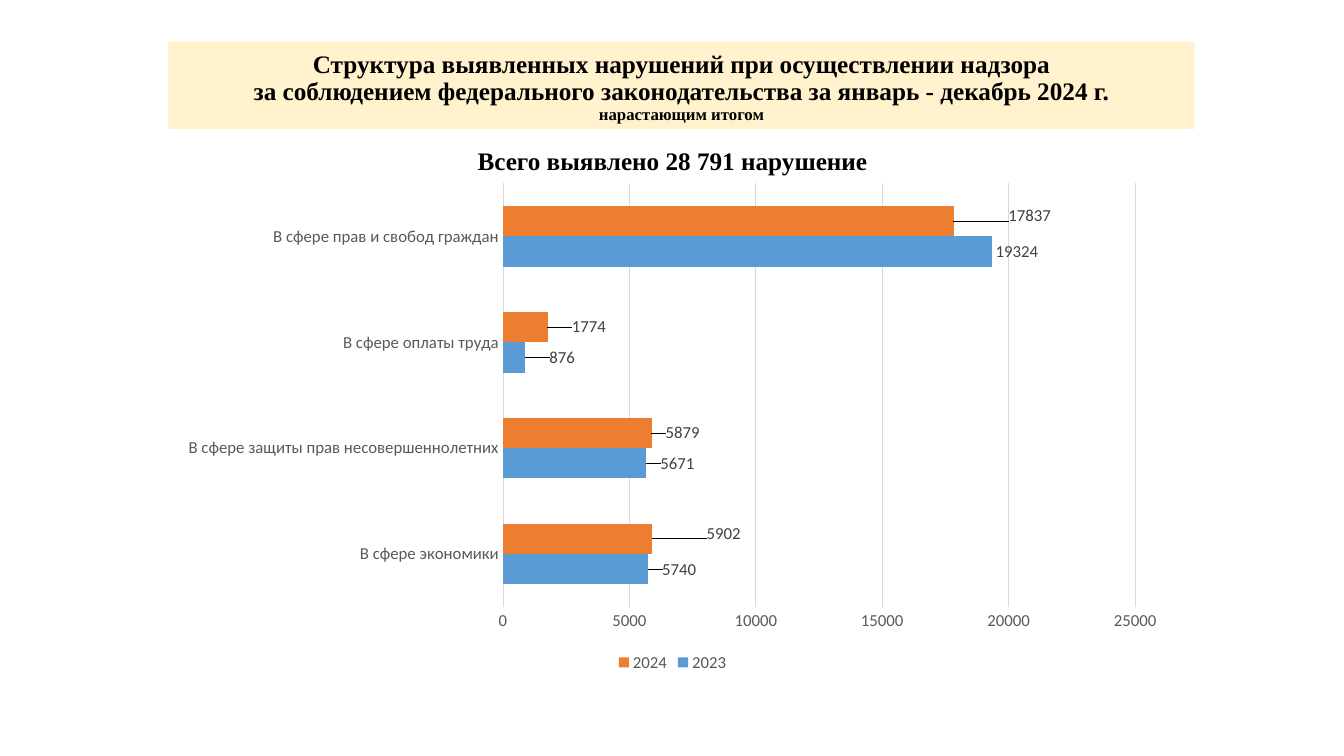
"""Builds the slide on violations found in supervision of federal law."""
from lxml import etree
from pptx import Presentation
from pptx.chart.data import CategoryChartData
from pptx.dml.color import RGBColor
from pptx.enum.chart import XL_CHART_TYPE, XL_LABEL_POSITION, XL_LEGEND_POSITION, XL_TICK_MARK
from pptx.enum.text import MSO_ANCHOR, PP_ALIGN
from pptx.oxml.ns import qn
from pptx.util import Inches, Pt

BARS = XL_CHART_TYPE.BAR_CLUSTERED
OUTSIDE = XL_LABEL_POSITION.OUTSIDE_END
LEGEND_BOTTOM = XL_LEGEND_POSITION.BOTTOM
NO_TICK = XL_TICK_MARK.NONE
CENTER = PP_ALIGN.CENTER
TOP, BOTTOM = MSO_ANCHOR.TOP, MSO_ANCHOR.BOTTOM

BLACK = RGBColor(0x00, 0x00, 0x00)
CREAM = RGBColor(0xFF, 0xF2, 0xCC)
BLUE = RGBColor(0x5B, 0x9B, 0xD5)
ORANGE = RGBColor(0xED, 0x7D, 0x31)
AXIS_GRAY = RGBColor(0x59, 0x59, 0x59)
LABEL_GRAY = RGBColor(0x40, 0x40, 0x40)
GRID_GRAY = RGBColor(0xD9, 0xD9, 0xD9)

HEADING = [
    ("Структура выявленных нарушений при осуществлении надзора\v"
     "за соблюдением федерального законодательства за январь - декабрь 2024 г.\v", 18),
    ("нарастающим итогом", 12),
]
TOTAL = [("Всего выявлено 28 791 нарушение", 18)]
SPHERES = [
    "В сфере экономики",
    "В сфере защиты прав несовершеннолетних",
    "В сфере оплаты труда",
    "В сфере прав и свобод граждан",
]
YEARS = [
    {"name": "2023", "color": BLUE, "counts": (5740, 5671, 876, 19324),
     "label_shifts": ((0.01, 0), (0.01, 0), (0.02, 0), (0, 0))},
    {"name": "2024", "color": ORANGE, "counts": (5902, 5879, 1774, 17837),
     "label_shifts": ((0.05, -0.01), (0.01, 0), (0.02, 0), (0.05, -0.01))},
]

LEFT = 1.67


def style_font(font, size=12, color=AXIS_GRAY, name="Calibri", bold=False):
    font.size, font.name, font.bold = Pt(size), name, bold
    font.color.rgb = color


def add_text(slide, runs, box, fill=None, anchor=TOP, spacing=0.9):
    banner = slide.shapes.add_textbox(*map(Inches, box))
    if fill is not None:
        banner.fill.solid()
        banner.fill.fore_color.rgb = fill
    frame = banner.text_frame
    frame.word_wrap = True
    frame.vertical_anchor = anchor
    paragraph = frame.paragraphs[0]
    paragraph.alignment = CENTER
    paragraph.line_spacing = spacing
    for text, size in runs:
        for index, line in enumerate(text.split("\v")):
            if index:
                paragraph.add_line_break()
            if line:
                run = paragraph.add_run()
                run.text = line
                style_font(run.font, size, BLACK, "Times New Roman", True)


def shift_label(label_xml, shift):
    layout = etree.Element(qn("c:layout"))
    manual = etree.SubElement(layout, qn("c:manualLayout"))
    for axis, distance in zip("xy", shift):
        etree.SubElement(manual, qn(f"c:{axis}")).set("val", str(distance))
    label_xml.find(qn("c:idx")).addnext(layout)


def style_series(series, year):
    series.format.fill.solid()
    series.format.fill.fore_color.rgb = year["color"]
    labels = series.data_labels
    labels.show_value = True
    labels.position = OUTSIDE
    style_font(labels.font, color=LABEL_GRAY)
    for index in range(len(SPHERES)):
        label = series.points[index].data_label
        style_font(label.font, color=LABEL_GRAY)
        label.position = OUTSIDE
    for label_xml, shift in zip(labels._element.findall(qn("c:dLbl")), year["label_shifts"]):
        if any(shift):
            shift_label(label_xml, shift)


def add_violations_chart(slide, box):
    data = CategoryChartData()
    data.categories = SPHERES
    for year in YEARS:
        data.add_series(year["name"], year["counts"])
    chart = slide.shapes.add_chart(BARS, *map(Inches, box), data).chart
    style_font(chart.font, 10, BLACK)
    chart.has_title = False
    chart.has_legend = True
    chart.legend.position = LEGEND_BOTTOM
    chart.legend.include_in_layout = False
    style_font(chart.legend.font)
    for axis in (chart.category_axis, chart.value_axis):
        axis.major_tick_mark = axis.minor_tick_mark = NO_TICK
        axis.format.line.fill.background()
        style_font(axis.tick_labels.font)
    chart.value_axis.has_major_gridlines = True
    grid = chart.value_axis.major_gridlines.format.line
    grid.color.rgb, grid.width = GRID_GRAY, Pt(0.75)
    plot = chart.plots[0]
    plot.gap_width = 150
    plot.vary_by_categories = False
    for series, year in zip(plot.series, YEARS):
        style_series(series, year)


def main():
    deck = Presentation()
    deck.slide_width, deck.slide_height = Inches(13.33), Inches(7.5)
    slide = deck.slides.add_slide(deck.slide_layouts[6])
    add_text(slide, HEADING, (LEFT, 0.41, 10.18, 0.87), fill=CREAM, anchor=BOTTOM)
    add_text(slide, TOTAL, (LEFT, 1.45, 10, 0.36), spacing=0.8)
    add_violations_chart(slide, (LEFT, 1.72, 10, 4.99))
    deck.save("out.pptx")


if __name__ == "__main__":
    main()
